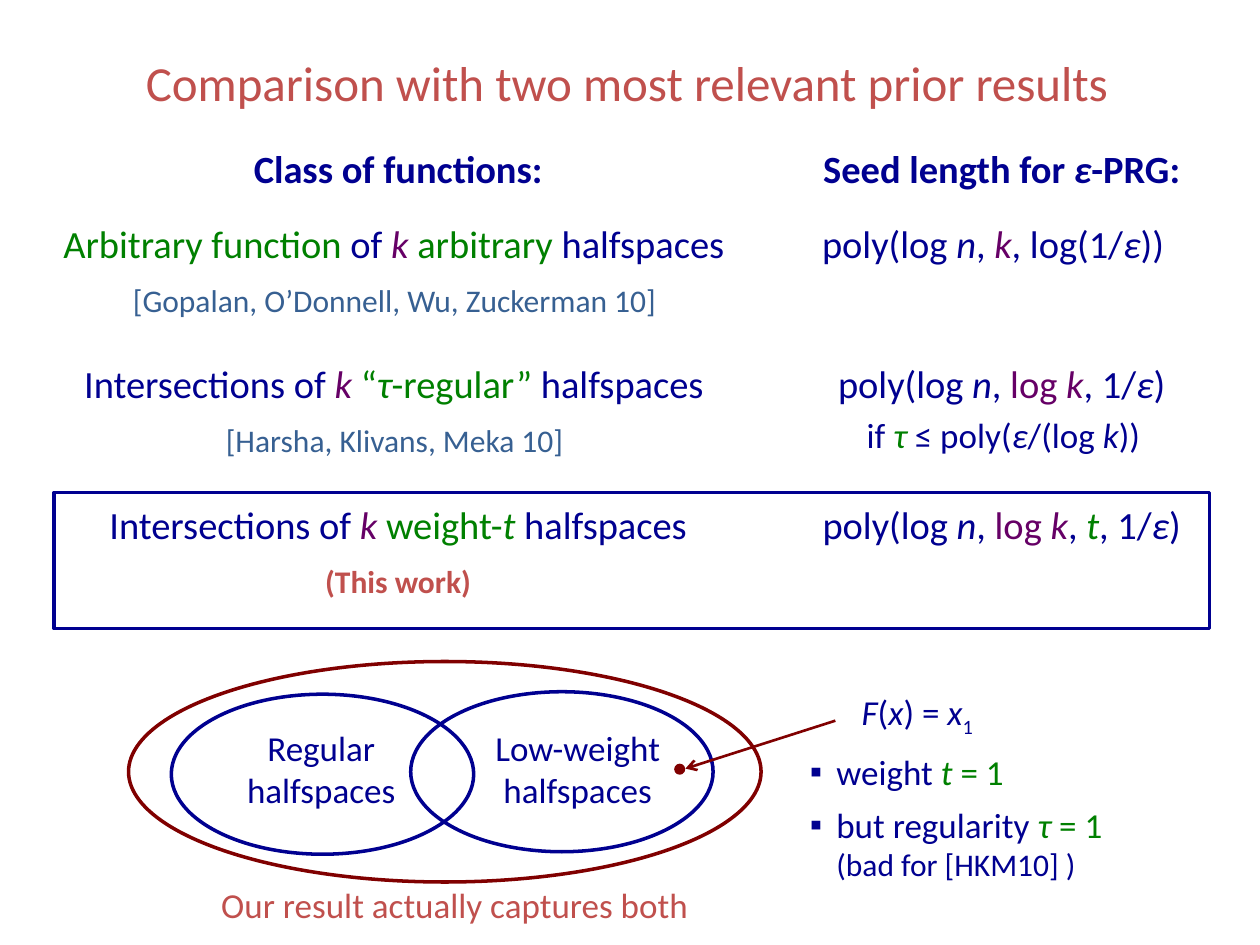
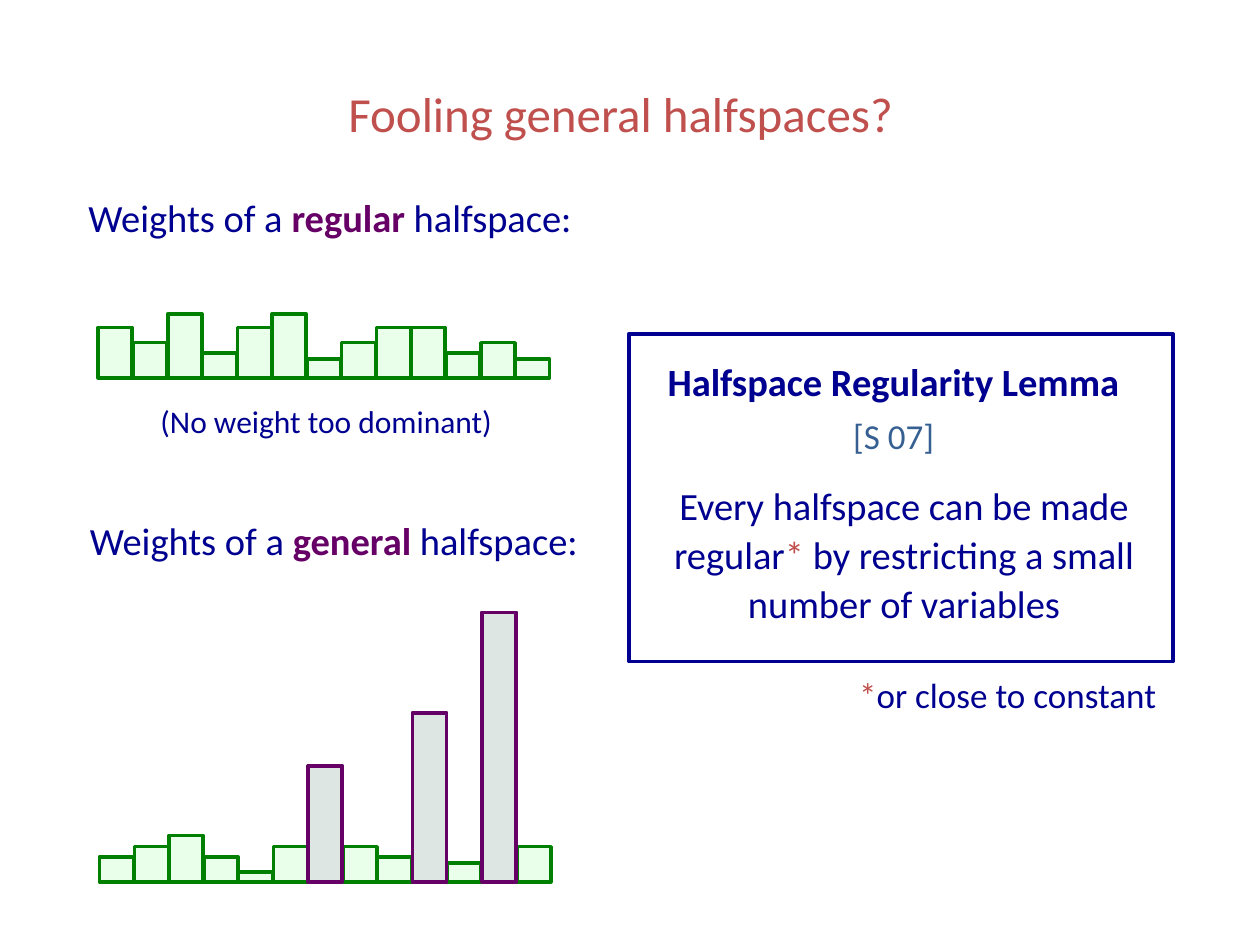
from dataclasses import dataclass

from lxml.etree import SubElement
from pptx import Presentation
from pptx.dml.color import RGBColor
from pptx.enum.shapes import MSO_CONNECTOR as Connector, MSO_SHAPE as Shape
from pptx.enum.text import MSO_ANCHOR as Anchor, PP_ALIGN as Align
from pptx.oxml.ns import qn
from pptx.util import Inches, Pt

COLORS = {
    "navy": "000090", "purple": "660066", "green": "008000", "red": "C0504D",
    "cite": "376092", "maroon": "800000", "mint": "CCFFCC", "lilac": "CCC1DA",
}
FONT = "Calibri"
SLIDE_W, SLIDE_H = Inches(10), Inches(7.5)
COLUMNS, ROWS = 100, 75  # layout grid of the slide


@dataclass
class Para:
    """Runs are (text, style, ...); a style is a colour name, i, b or sub."""
    runs: list
    size: float = 22
    align: Align = Align.CENTER
    leading: float = None
    after: float = 0
    bullet: str = None


def cols(count):
    return round(SLIDE_W * count / COLUMNS)


def rows(count):
    return round(SLIDE_H * count / ROWS)


def place(area):
    left, top, width, height = area
    return cols(left), rows(top), cols(width), rows(height)


def rgb(name):
    return RGBColor.from_string(COLORS[name])


# Text
def add_run(paragraph, size, text, *styles):
    if text == "\n":
        paragraph.add_line_break()
        return
    run = paragraph.add_run()
    run.text = text
    font = run.font
    font.name, font.size = FONT, Pt(size)
    font.bold, font.italic = "b" in styles, "i" in styles
    font.color.rgb = rgb(next((s for s in styles if s in COLORS), "navy"))
    if "small" in styles:
        font.size = Pt(size - 2)
    if "sub" in styles:
        font._element.set("baseline", "-25000")


def add_bullet(paragraph, symbol):
    props = paragraph._p.get_or_add_pPr()
    props.set("marL", str(Inches(0.31)))
    props.set("indent", str(Inches(-0.21)))
    SubElement(props, qn("a:buFont"), typeface="Arial")
    SubElement(props, qn("a:buChar"), char=symbol)


def write(frame, paras):
    for number, para in enumerate(paras):
        paragraph = frame.add_paragraph() if number else frame.paragraphs[0]
        paragraph.alignment = para.align
        if para.leading:
            paragraph.line_spacing = Pt(para.leading)
        paragraph.space_after = Pt(para.after)
        if para.bullet:
            add_bullet(paragraph, para.bullet)
        for run in para.runs:
            add_run(paragraph, para.size, *run)


def add_text(slide, area, *paras, top_inset=0.05, anchor=Anchor.TOP):
    frame = slide.shapes.add_textbox(*place(area)).text_frame
    frame.word_wrap = True
    frame.margin_top = Inches(top_inset)
    frame.vertical_anchor = anchor
    write(frame, paras)


def add_title(slide, text, left, top):
    add_text(slide, (left, top, 99.7, 17.3),
             Para([(text, "red")], 28, leading=38.6), anchor=Anchor.MIDDLE)


# Shapes
def add_outline(slide, kind, area, line, width=2, fill=None, opacity=100):
    shape = slide.shapes.add_shape(kind, *place(area))
    shape.shadow.inherit = False
    shape.line.color.rgb = rgb(line)
    shape.line.width = Pt(width)
    if not fill:
        shape.fill.background()
        return
    shape.fill.solid()
    shape.fill.fore_color.rgb = rgb(fill)
    tint = shape._element.spPr.find(".//" + qn("a:srgbClr"))
    SubElement(tint, qn("a:alpha"), val=str(opacity * 1000))


def add_arrow(slide, start, end, color):
    arrow = slide.shapes.add_connector(
        Connector.STRAIGHT, cols(start[0]), rows(start[1]), cols(end[0]), rows(end[1]))
    arrow.line.color.rgb = rgb(color)
    arrow.line.width = Pt(1.5)
    SubElement(arrow.line._get_or_add_ln(), qn("a:tailEnd"), type="arrow")
    SubElement(arrow._element.spPr, qn("a:effectLst"))


def add_results(slide, top, heights, results):
    """results maps a row number to the paragraphs of its two cells."""
    area = (1.9, top, 95.8, sum(heights))
    table = slide.shapes.add_table(len(heights), 2, *place(area)).table
    table.first_row = table.horz_banding = False
    for column, width in zip(table.columns, (59.4, 36.4)):
        column.width = cols(width)
    for row, height in zip(table.rows, heights):
        row.height = rows(height)
    for cell in table.iter_cells():
        cell.fill.background()
    for row, pair in results.items():
        for column, paras in enumerate(pair):
            write(table.cell(row, column).text_frame, paras)


def add_weights(slide, left, base, heights, dominant=()):
    pitch, width = 2.76, 2.7

    def bar(index, line, fill):
        height = heights[index]
        area = (left + index * pitch, base - height, width, height)
        add_outline(slide, Shape.RECTANGLE, area, line, fill=fill, opacity=40)

    for index in range(len(heights)):
        bar(index, "green", "mint")
    for index in dominant:
        bar(index, "purple", "lilac")


# Slides
def citation(text, *styles):
    return Para([(text, *styles)], 18, leading=30)


def seed(*middle):
    return [Para([("poly(log ",), ("n", "i"), (", ",), *middle, ("ε", "i"), (")",)])]


def comparison_slide(slide):
    k, log_k = ("k ", "purple", "i"), [("log ", "purple"), ("k", "purple", "i")]

    # Prior results and this work
    regular = [
        Para([("Intersections of ",), k, ("“", "green"), ("τ", "green", "i"),
              ("-regular” ", "green"), ("halfspaces ",)]),
        citation("[Harsha, Klivans, Meka 10] ", "cite")]
    add_results(slide, 20, (4.1, 4.1, 9.3, 4), {
        2: (regular, seed(*log_k, (", 1/",)))})

    header = ([Para([("Class of functions:", "b")])],
              [Para([("Seed length for ", "b"), ("ε", "b", "i"), ("-PRG:", "b")])])
    arbitrary = [
        Para([("Arbitrary function ", "green"), ("of ",), k,
              ("arbitrary ", "green"), ("halfspaces ",)]),
        citation("[Gopalan, O’Donnell, Wu, Zuckerman 10] ", "cite")]
    arbitrary_seed = [
        Para([("poly(log ",), ("n", "i"), (", ",), ("k", "purple", "i"),
              (", log(1/",), ("ε", "i"), ("))  ",)])]
    low_weight = [
        Para([("Intersections of ",), k, ("weight-", "green"),
              ("t ", "green", "i"), ("halfspaces",)]),
        citation("(This work)", "red", "b")]
    add_results(slide, 11.2, (5.9, 10.3, 12, 10.9), {
        0: header,
        1: (arbitrary, arbitrary_seed),
        3: (low_weight, seed(*log_k, (", ",), ("t", "green", "i"), (", 1/",)))})
    add_outline(slide, Shape.RECTANGLE, (4.3, 39.1, 91.7, 10.8), "navy")
    add_title(slide, "Comparison with two most relevant prior results", -0.1, -2.5)
    add_text(slide, (65.7, 32.3, 28.5, 4.4), Para(
        [("if",), (" τ ", "green", "i"), ("≤ poly(",), ("ε", "i"), ("/(log ",),
         ("k", "i"), (")) ",)], 20))

    # Diagram of the classes
    for left, top in ((13.6, 55.1), (32.6, 54.9)):
        add_outline(slide, Shape.OVAL, (left, top, 24, 12.7), "navy")
    add_outline(slide, Shape.OVAL, (10.2, 52.5, 50.2, 17.5), "maroon")
    for left, width, name in ((18, 15, "Regular"), (37.2, 17.3, "Low-weight")):
        add_text(slide, (left, 57.2, width, 7.7), Para([(name + " halfspaces",)], 20))
    add_text(slide, (2.3, 69.6, 67.6, 4.4),
             Para([("Our result actually captures both", "red")], 20))

    # Example function
    add_outline(slide, Shape.OVAL, (53.6, 60.7, 0.7, 0.7), "maroon", 1.25, "maroon")
    add_arrow(slide, (66.3, 57.2), (54.4, 61), "maroon")
    add_text(slide, (67.4, 54.3, 12, 4.4), Para(
        [("F", "i"), ("(",), ("x", "i"), (") = ",), ("x", "i"), ("1", "sub")],
        20, Align.LEFT))
    add_text(
        slide, (62.3, 59.1, 33.7, 11.9),
        Para([("weight ",), ("t", "green", "i"), (" = 1", "green")],
             20, Align.LEFT, after=6, bullet="▪"),
        Para([("but regularity ",), ("τ ", "green", "i"), ("= 1", "green"), ("\n",),
              ("(bad for [HKM10] )", "small")], 20, Align.LEFT, bullet="▪"))


def general_slide(slide):
    add_title(slide, "Fooling general halfspaces?", -0.6, 0)

    # Weights
    for left, top, kind in ((4.2, 15.7, "regular"), (4.5, 41.4, "general")):
        add_text(slide, (left, top, 44, 7.5), Para(
            [("Weights of a ",), (kind, "purple", "b"), (" halfspace:",)],
            leading=24, after=3), top_inset=0)
    add_weights(slide, 7.8, 30,
                (4, 2.8, 5.1, 2, 4, 5.1, 1.5, 2.8, 4, 4, 2, 2.8, 1.5))
    add_text(slide, (3.9, 31.6, 44, 7.5),
             Para([("(No weight too dominant)",)], 18, leading=24), top_inset=0)
    add_weights(slide, 7.9, 70,
                (2, 2.8, 3.7, 2, 0.8, 2.8, 9.2, 2.8, 2, 13.4, 1.5, 21.4, 2.8),
                dominant=(6, 9, 11))

    # Lemma
    add_outline(slide, Shape.RECTANGLE, (49.9, 26.5, 43.2, 26), "navy")
    add_text(slide, (44.9, 30.4, 52.7, 9.1),
             Para([("Halfspace Regularity Lemma ", "b")], leading=12),
             Para([("[S 07] ", "cite")], 20, leading=30, after=9), top_inset=0)
    add_text(slide, (48.3, 38, 46.9, 12.7), Para(
        [("Every halfspace can be made regular",), ("*", "red"),
         (" by restricting a small number of variables",)], leading=28), top_inset=0)
    add_text(slide, (67.2, 52.9, 27, 4.6), Para(
        [("*", "red"), ("or close to constant",)], 20, Align.LEFT, leading=28),
        top_inset=0)


def main():
    deck = Presentation()
    deck.slide_width, deck.slide_height = SLIDE_W, SLIDE_H
    blank = deck.slide_layouts[6]
    for build in (comparison_slide, general_slide):
        build(deck.slides.add_slide(blank))
    deck.save("out.pptx")


if __name__ == "__main__":
    main()
